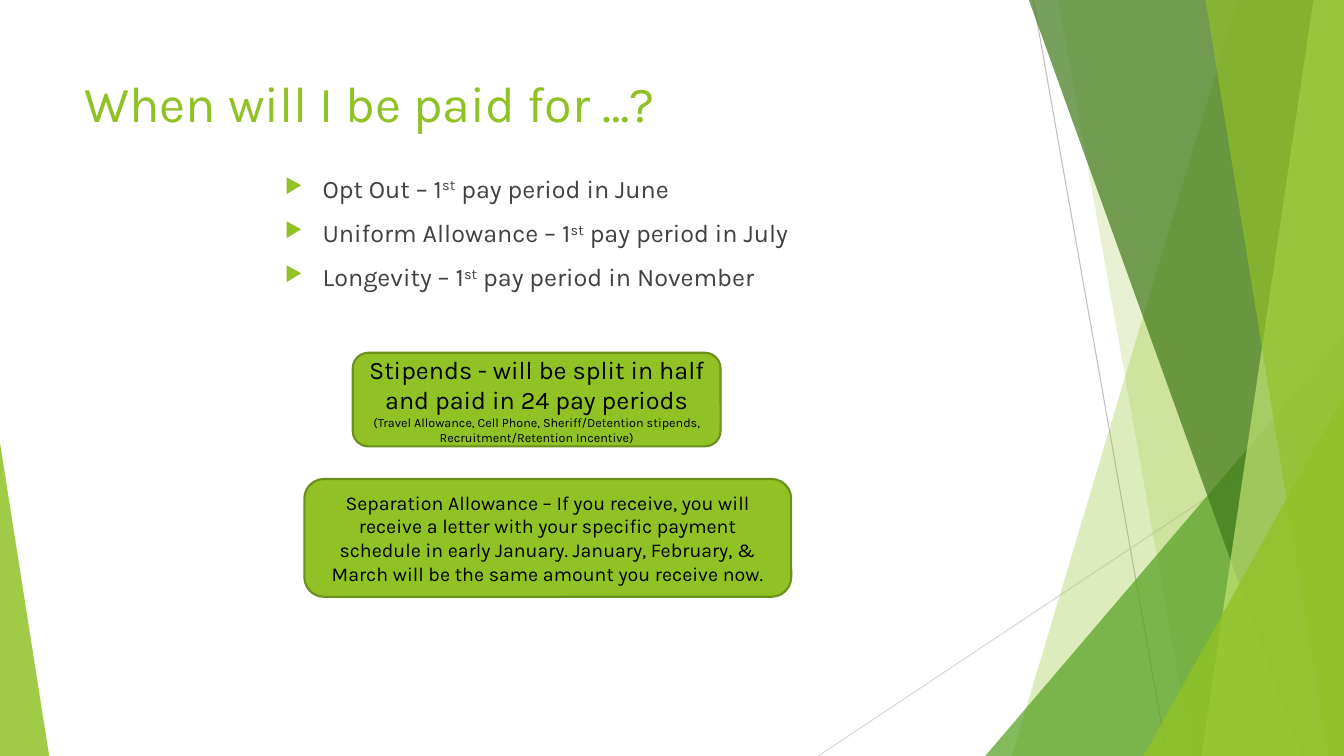
from dataclasses import dataclass

from lxml.etree import SubElement
from pptx import Presentation
from pptx.dml.color import RGBColor
from pptx.enum.shapes import MSO_CONNECTOR, MSO_SHAPE
from pptx.enum.text import MSO_ANCHOR, PP_ALIGN
from pptx.oxml.ns import qn
from pptx.util import Cm, Pt


@dataclass(frozen=True)
class Theme:
    font: str = "Karla"
    lime: str = "90C226"
    pale_lime: str = "C0E474"
    green: str = "54A021"
    dark_green: str = "3F7819"
    outline: str = "6B901C"
    gray: str = "BFBFBF"
    light_gray: str = "D9D9D9"
    body_text: str = "404040"
    card_text: str = "000000"
    title_size: int = 36
    large_size: int = 18
    medium_size: int = 14
    small_size: int = 9


@dataclass(frozen=True)
class Box:
    left: float
    top: float
    width: float
    height: float

    @property
    def right(self):
        return self.left + self.width

    @property
    def bottom(self):
        return self.top + self.height

    def lengths(self):
        return [Cm(value) for value in (self.left, self.top, self.width, self.height)]


THEME = Theme()
PAGE = Box(0, 0, 33.87, 19.05)


def color(code):
    return RGBColor.from_string(code)


def set_font(paragraph, size, code):
    paragraph.font.name = THEME.font
    paragraph.font.size = Pt(size)
    paragraph.font.color.rgb = color(code)


def paint(shape, code, opacity):
    shape.shadow.inherit = False
    shape.fill.solid()
    shape.fill.fore_color.rgb = color(code)
    shape.line.fill.background()
    tint = shape._element.spPr.find(f"{qn('a:solidFill')}/{qn('a:srgbClr')}")
    SubElement(tint, qn("a:alpha"), val=str(opacity * 1000))


def add_thin_line(slide, start, end, code):
    points = [Cm(value) for value in (*start, *end)]
    connector = slide.shapes.add_connector(MSO_CONNECTOR.STRAIGHT, *points)
    connector.line.color.rgb = color(code)
    connector.line.width = Pt(0.75)
    SubElement(connector._element.spPr, qn("a:effectLst"))


def add_panel(slide, box, top_left, bottom_left, code, opacity):
    corners = [
        (box.left + top_left, box.top),
        (box.right, box.top),
        (box.right, box.bottom),
        (box.left + bottom_left, box.bottom),
    ]
    points = [(Cm(x), Cm(y)) for x, y in corners]
    builder = slide.shapes.build_freeform(*points[0])
    builder.add_line_segments(points[1:], close=True)
    paint(builder.convert_to_shape(), code, opacity)


def add_wedge(slide, box, apex, code, opacity):
    shape = slide.shapes.add_shape(MSO_SHAPE.ISOSCELES_TRIANGLE, *box.lengths())
    shape.adjustments[0] = apex
    paint(shape, code, opacity)


def add_backdrop(slide, box):
    add_thin_line(slide, (box.left + 26.04, box.top), (box.left + 29.41, box.bottom), THEME.gray)
    add_thin_line(slide, (box.right, box.top + 10.24), (box.left + 20.62, box.bottom), THEME.light_gray)

    def add_right_wedge(width, height, code, opacity):
        wedge = Box(box.right - width, box.bottom - height, width, height)
        add_wedge(slide, wedge, 1, code, opacity)

    add_panel(slide, box, 31.19, 25.5, THEME.lime, 30)
    add_panel(slide, box, 26.67, 30.05, THEME.lime, 20)
    add_right_wedge(9.04, 10.59, THEME.green, 72)
    add_panel(slide, box, 25.93, 32.79, THEME.dark_green, 70)
    add_panel(slide, box, 33.1, 30.28, THEME.pale_lime, 70)
    add_panel(slide, box, 30.38, 33.48, THEME.lime, 65)
    add_right_wedge(5.05, 9.07, THEME.lime, 80)
    add_wedge(slide, Box(box.left, box.bottom - 7.9, 1.24, 7.9), 0, THEME.lime, 85)


def add_text_frame(slide, box):
    text_frame = slide.shapes.add_textbox(*box.lengths()).text_frame
    text_frame.word_wrap = True
    return text_frame


def add_title(slide, box, text):
    paragraph = add_text_frame(slide, box).paragraphs[0]
    paragraph.text = text
    set_font(paragraph, THEME.title_size, THEME.lime)


def add_bullet(paragraph):
    properties = paragraph._p.get_or_add_pPr()
    properties.set("marL", str(Cm(0.95)))
    properties.set("indent", str(Cm(-0.95)))
    bullet_color = SubElement(properties, qn("a:buClr"))
    SubElement(bullet_color, qn("a:srgbClr"), val=THEME.lime)
    SubElement(properties, qn("a:buSzPct"), val="80000")
    SubElement(properties, qn("a:buChar"), char="▶")


def add_pay_dates(slide, box, pay_dates):
    text_frame = add_text_frame(slide, box)
    for index, (benefit, month) in enumerate(pay_dates):
        paragraph = text_frame.add_paragraph() if index else text_frame.paragraphs[0]
        paragraph.space_before = Pt(10)
        add_bullet(paragraph)
        set_font(paragraph, THEME.large_size, THEME.body_text)
        paragraph.add_run().text = f"{benefit} – 1"
        ordinal = paragraph.add_run()
        ordinal.text = "st"
        ordinal.font._element.set("baseline", "30000")
        paragraph.add_run().text = f" pay period in {month}"


def add_card(slide, box, texts):
    shape = slide.shapes.add_shape(MSO_SHAPE.ROUNDED_RECTANGLE, *box.lengths())
    shape.shadow.inherit = False
    shape.fill.solid()
    shape.fill.fore_color.rgb = color(THEME.lime)
    shape.line.color.rgb = color(THEME.outline)
    shape.line.width = Pt(1.5)
    text_frame = shape.text_frame
    text_frame.word_wrap = True
    text_frame.vertical_anchor = MSO_ANCHOR.MIDDLE
    for index, (text, size) in enumerate(texts):
        paragraph = text_frame.add_paragraph() if index else text_frame.paragraphs[0]
        paragraph.text = text
        paragraph.alignment = PP_ALIGN.CENTER
        set_font(paragraph, size, THEME.card_text)


def main():
    presentation = Presentation()
    presentation.slide_width = Cm(PAGE.width)
    presentation.slide_height = Cm(PAGE.height)
    slide = presentation.slides.add_slide(presentation.slide_layouts[6])
    add_backdrop(slide, PAGE)
    add_title(slide, Box(1.88, 1.7, 23.88, 3.66), "When will I be paid for …?")
    add_pay_dates(slide, Box(6.93, 4.24, 13.79, 3.53), [
        ("Opt Out", "June"),
        ("Uniform Allowance", "July"),
        ("Longevity", "November"),
    ])
    add_card(slide, Box(8.89, 8.89, 9.27, 2.36), [
        ("Stipends - will be split in half and paid in 24 pay periods", THEME.large_size),
        ("(Travel Allowance, Cell Phone, Sheriff/Detention stipends, "
         "Recruitment/Retention Incentive)", THEME.small_size),
    ])
    add_card(slide, Box(7.67, 12.07, 12.27, 2.97), [
        ("Separation Allowance – If you receive, you will receive a letter with your "
         "specific payment schedule in early January. January, February, & March will "
         "be the same amount you receive now.", THEME.medium_size),
    ])
    presentation.save("out.pptx")


if __name__ == "__main__":
    main()
